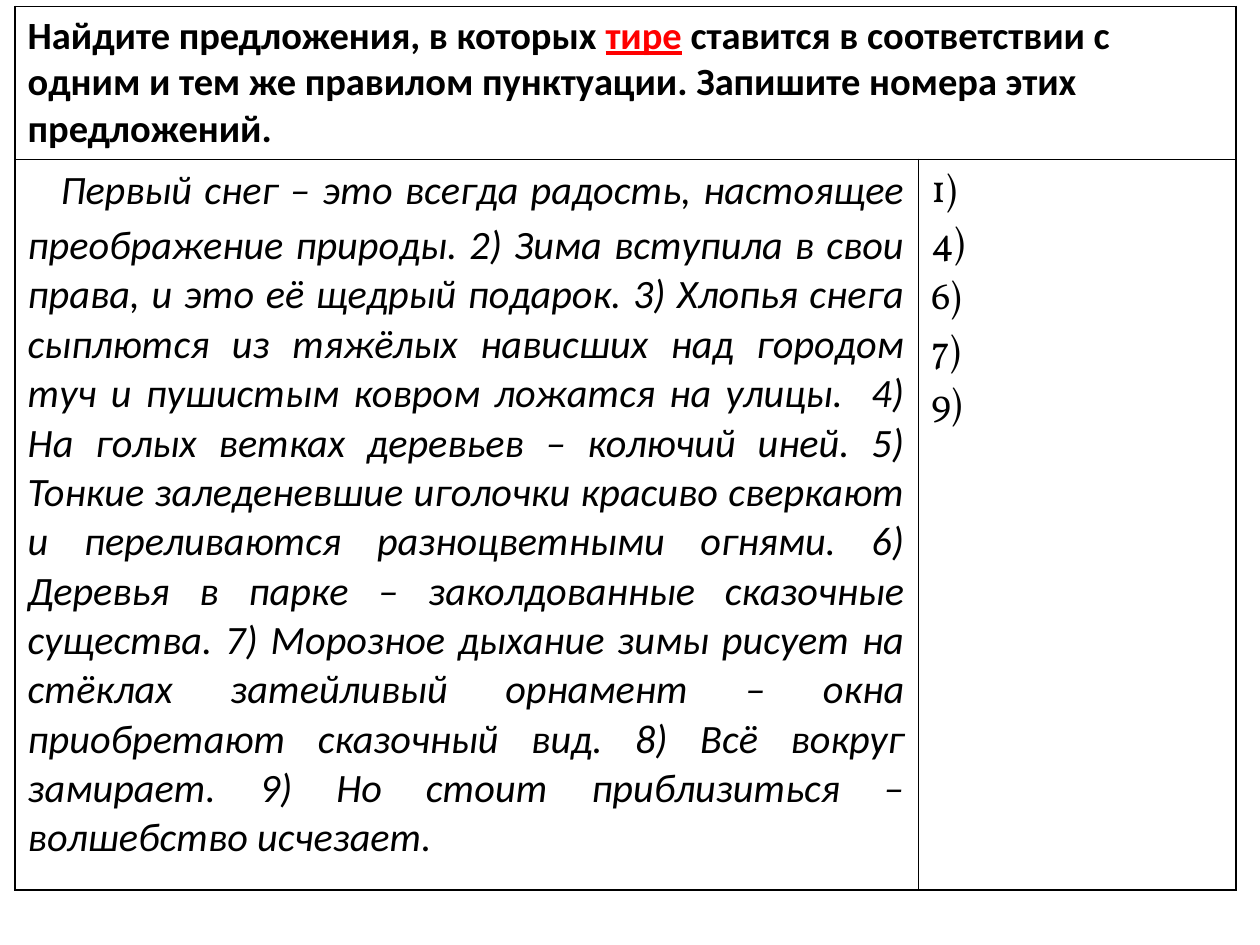
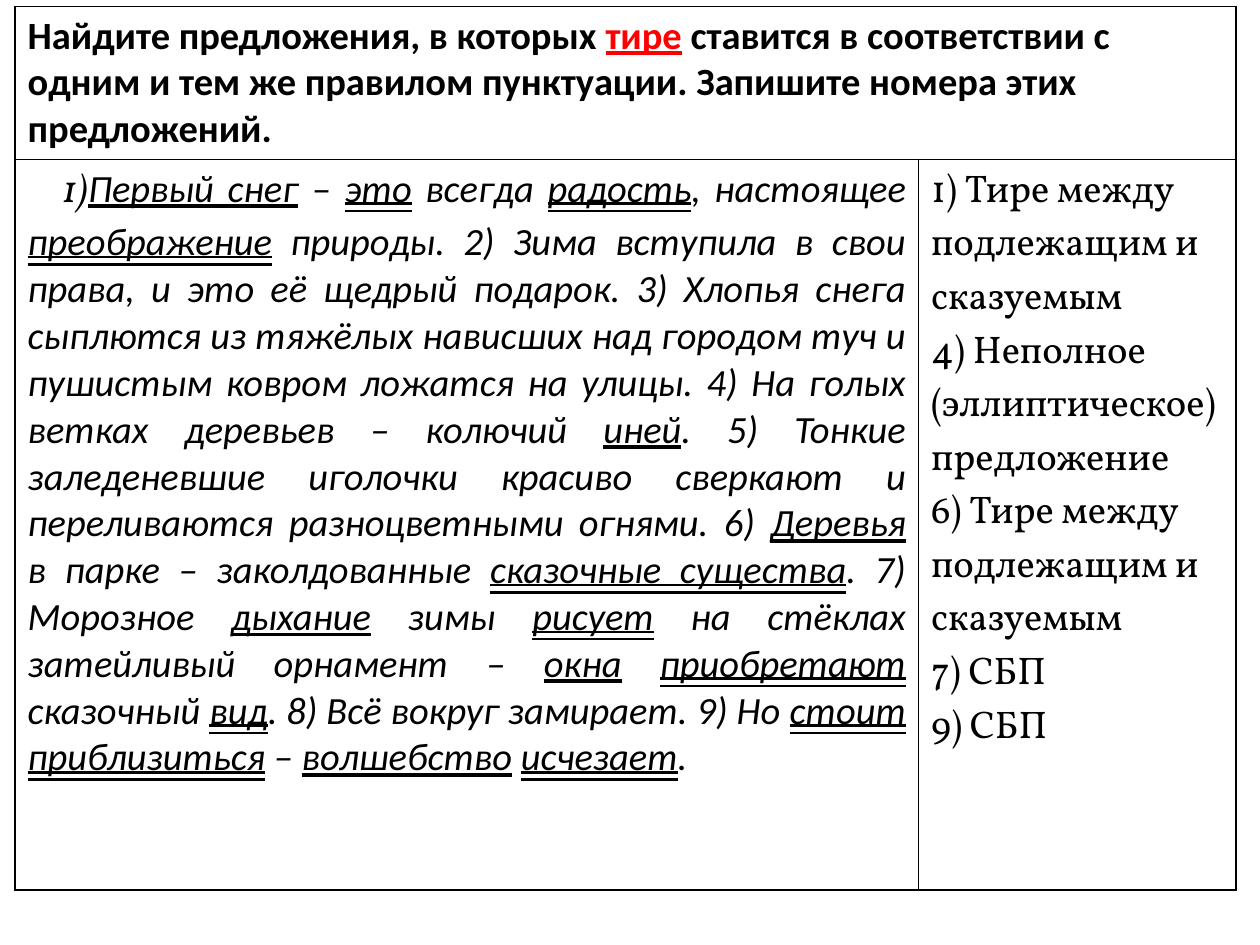
"""Build two slides of a punctuation exercise: the task and its worked answer."""
import pptx
import pptx.dml.color
import pptx.enum.text
import pptx.oxml
import pptx.oxml.ns
import pptx.util

Pt = pptx.util.Pt
COLORS = {"text": "000000", "accent": "FF0000", "border": "000000"}
BODY_FONT = "Calibri"
NOTE_FONT = "Vollkorn"
UNDERLINES = {
    "_": pptx.enum.text.MSO_UNDERLINE.SINGLE_LINE,
    "=": pptx.enum.text.MSO_UNDERLINE.DOUBLE_LINE,
    "!": pptx.enum.text.MSO_UNDERLINE.SINGLE_LINE,
}

TASK = (
    "Найдите предложения, в которых |!тире| ставится в соответствии с одним и тем же "
    "правилом пунктуации. Запишите номера этих предложений."
)
EXERCISES = [
    {
        "size": 23,
        "lead": " ",
        "story": (
            "Первый снег – это всегда радость, настоящее преображение природы. "
            "2) Зима вступила в свои права, и это её щедрый подарок. "
            "3) Хлопья снега сыплются из тяжёлых нависших над городом туч и пушистым ковром "
            "ложатся на улицы.  4) На голых ветках деревьев – колючий иней. "
            "5) Тонкие заледеневшие иголочки красиво сверкают и переливаются разноцветными огнями. "
            "6) Деревья в парке – заколдованные сказочные существа. "
            "7) Морозное дыхание зимы рисует на стёклах затейливый орнамент – окна приобретают "
            "сказочный вид. 8) Всё вокруг замирает. "
            "9) Но стоит приблизиться – волшебство исчезает."
        ),
        "answers": ["1)", "4)", "6)", "7)", "9)"],
    },
    {
        "size": 22,
        "lead": " 1)",
        "story": (
            "_Первый снег| – |=это| всегда |=радость|, настоящее |=преображение| природы. "
            "2) Зима вступила в свои права, и это её щедрый подарок. "
            "3) Хлопья снега сыплются из тяжёлых нависших над городом туч и пушистым ковром "
            "ложатся на улицы. 4) На голых ветках деревьев – колючий |_иней|. "
            "5) Тонкие заледеневшие иголочки красиво сверкают и переливаются разноцветными огнями. "
            "6) |_Деревья| в парке – заколдованные |=сказочные существа|. "
            "7) Морозное |_дыхание| зимы |=рисует| на стёклах затейливый орнамент – |_окна| "
            "|=приобретают| сказочный |=вид|. 8) Всё вокруг замирает. "
            "9) Но |=стоит приблизиться| – |_волшебство| |=исчезает|."
        ),
        "answers": [
            "1) Тире между подлежащим и сказуемым",
            "4) Неполное (эллиптическое) предложение",
            "6) Тире между подлежащим и сказуемым",
            "7) СБП",
            "9) СБП",
        ],
    },
]


def add_runs(paragraph, marked_text, font_name, size, bold=False, italic=False):
    """Add runs split at bars; a leading mark selects the underline."""
    for part in marked_text.split("|"):
        mark = part[0] if part[0] in UNDERLINES else ""
        run = paragraph.add_run()
        run.text = part[len(mark):]
        run.font.name = font_name
        run.font.size = Pt(size)
        run.font.bold = bold
        run.font.italic = italic
        run.font.underline = UNDERLINES.get(mark, False)
        color = COLORS["accent" if mark == "!" else "text"]
        run.font.color.rgb = pptx.dml.color.RGBColor.from_string(color)


def style_cell(cell):
    """Give a cell thin borders on all sides and no fill."""
    properties = cell._tc.get_or_add_tcPr()
    for side in ("lnL", "lnR", "lnT", "lnB"):
        properties.append(pptx.oxml.parse_xml(
            f'<a:{side} {pptx.oxml.ns.nsdecls("a")} w="{Pt(1)}"><a:solidFill>'
            f'<a:srgbClr val="{COLORS["border"]}"/></a:solidFill></a:{side}>'
        ))
    cell.fill.background()


presentation = pptx.Presentation()
presentation.slide_width = Pt(720)
presentation.slide_height = Pt(540)

for exercise in EXERCISES:
    slide = presentation.slides.add_slide(presentation.slide_layouts[6])
    table = slide.shapes.add_table(2, 2, Pt(8.64), Pt(3.6), Pt(697.7), Pt(485.3)).table
    table.first_row = False
    table.horz_banding = False
    for column, width in zip(table.columns, (516.2, 181.5)):
        column.width = Pt(width)
    for row, height in zip(table.rows, (67.7, 417.6)):
        row.height = Pt(height)
    for cell in table.iter_cells():
        style_cell(cell)

    task_cell, story_cell, answer_cell = table.cell(0, 0), table.cell(1, 0), table.cell(1, 1)
    task_cell.merge(table.cell(0, 1))
    add_runs(task_cell.text_frame.paragraphs[0], TASK, BODY_FONT, 22, bold=True)

    story = story_cell.text_frame.paragraphs[0]
    story.alignment = pptx.enum.text.PP_ALIGN.JUSTIFY
    story._p.get_or_add_pPr().set("indent", str(Pt(13)))
    add_runs(story, exercise["lead"], NOTE_FONT, 22, italic=True)
    add_runs(story, exercise["story"], BODY_FONT, exercise["size"], italic=True)

    answer_frame = answer_cell.text_frame
    for index, answer in enumerate(exercise["answers"]):
        paragraph = answer_frame.add_paragraph() if index else answer_frame.paragraphs[0]
        add_runs(paragraph, answer, NOTE_FONT, 22)

presentation.save("out.pptx")
